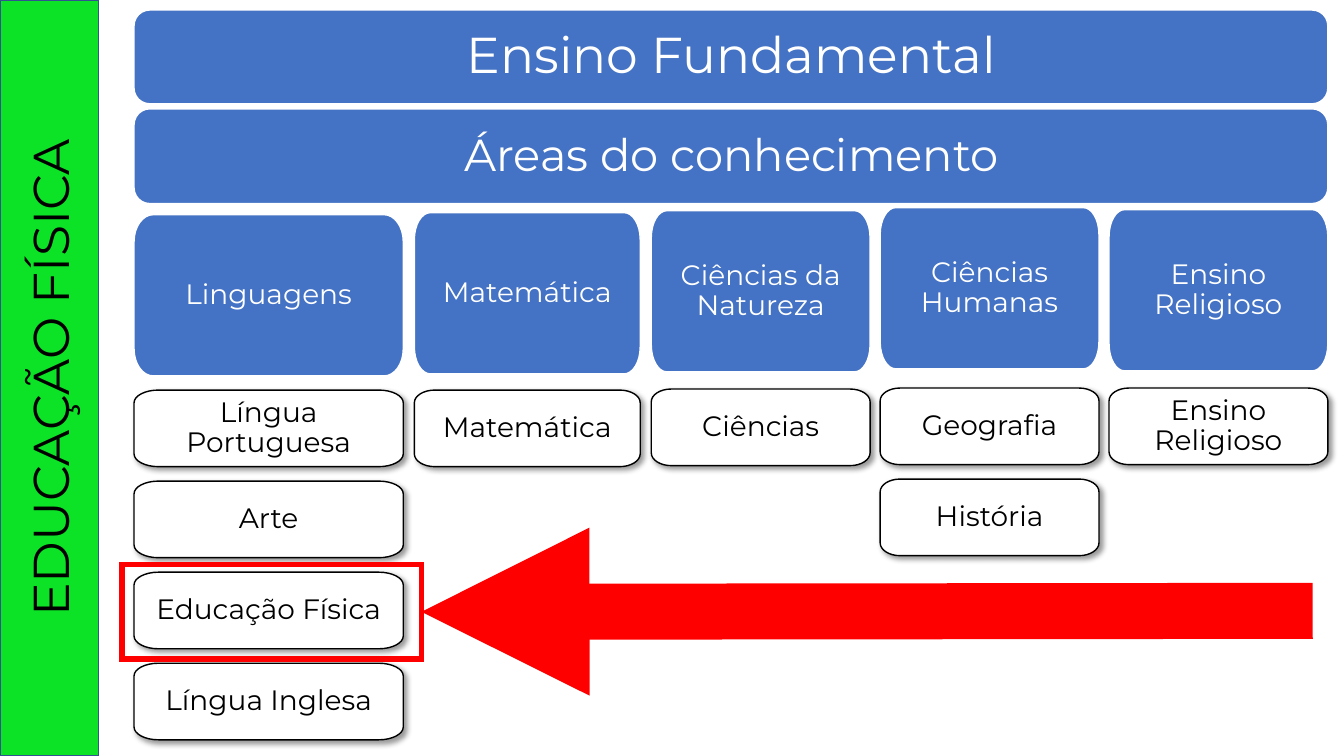
from dataclasses import dataclass

from lxml.etree import SubElement
from pptx import Presentation
from pptx.dml.color import RGBColor
from pptx.enum.shapes import MSO_CONNECTOR as Connector, MSO_SHAPE as Shape
from pptx.enum.text import MSO_ANCHOR as Anchor, MSO_AUTO_SIZE as AutoSize, PP_ALIGN as Align
from pptx.oxml.ns import qn
from pptx.util import Inches, Pt


@dataclass(frozen=True)
class Theme:
    font: str = "Montserrat"
    blue: str = "4472C4"
    green: str = "0DE326"
    navy: str = "31538F"
    red: str = "FF0000"
    white: str = "FFFFFF"
    black: str = "000000"
    title: int = 36
    subtitle: int = 32
    label: int = 20


THEME = Theme()
AREA_HEIGHT = 1.6
SUBJECT_HEIGHT = 0.76
SUBJECT_PITCH = 2.71 / 3
CURVE = 0.55
AREAS = [
    ("Linguagens", 1.33, 2.67, 2.13, 3.87,
     ["Língua Portuguesa", "Arte", "Educação Física", "Língua Inglesa"]),
    ("Matemática", 4.11, 2.24, 2.11, 3.87, ["Matemática"]),
    ("Ciências da Natureza", 6.46, 2.17, 2.09, 3.86, ["Ciências"]),
    ("Ciências Humanas", 8.73, 2.17, 2.06, 3.85, ["Geografia", "História"]),
    ("Ensino Religioso", 11, 2.17, 2.08, 3.85, ["Ensino Religioso"]),
]


def rgb(color):
    return RGBColor.from_string(color)


def paint(sp, fill, line, width=1):
    if fill:
        sp.fill.solid()
        sp.fill.fore_color.rgb = rgb(fill)
    else:
        sp.fill.background()
    sp.line.color.rgb = rgb(line)
    sp.line.width = Pt(width)
    SubElement(sp.line._get_or_add_ln(), qn("a:miter"), lim="800000")
    sp.shadow.inherit = False


def write(sp, text, size, color, inset=(0.1, 0.05), spacing=0.9):
    tf = sp.text_frame
    tf.word_wrap = True
    tf.auto_size = AutoSize.NONE
    tf.vertical_anchor = Anchor.MIDDLE
    tf.margin_left = tf.margin_right = Inches(inset[0])
    tf.margin_top = tf.margin_bottom = Inches(inset[1])
    p = tf.paragraphs[0]
    p.alignment = Align.CENTER
    p.line_spacing = spacing
    r = p.add_run()
    r.text = text
    r.font.name = THEME.font
    r.font.size = Pt(size)
    r.font.color.rgb = rgb(color)


def add_shadow(sp):
    effects = sp._element.spPr.find(qn("a:effectLst"))
    shadow = SubElement(effects, qn("a:outerShdw"), blurRad=str(Pt(4)), dist=str(Pt(3)),
                        dir="2700000", algn="tl", rotWithShape="0")
    color = SubElement(shadow, qn("a:srgbClr"), val=THEME.black)
    SubElement(color, qn("a:alpha"), val="40000")


def round_corners(sp):
    outline = next(sp._element.iter(qn("a:path")))
    w, h = int(outline.get("w")), int(outline.get("h"))
    steps = list(outline)
    ends = [(int(pt.get("x")), int(pt.get("y"))) for pt in outline.iter(qn("a:pt"))]
    for index, tip in zip((1, 3, 5, 7), [(0, 0), (w, 0), (w, h), (0, h)]):
        start, end = ends[index - 1], ends[index]
        controls = [tuple(round(a + CURVE * (t - a)) for a, t in zip(point, tip))
                    for point in (start, end)]
        curve = SubElement(outline, qn("a:cubicBezTo"))
        for x, y in controls + [end]:
            SubElement(curve, qn("a:pt"), x=str(x), y=str(y))
        outline.replace(steps[index], curve)


def add_card(s, text, left, top, width, height, fill, line, color, corner, inset):
    right, bottom = left + width, top + height
    rx, ry = width / corner, height / 6
    points = [(Inches(x), Inches(y)) for x, y in [
        (left, top + ry), (left + rx, top), (right - rx, top), (right, top + ry),
        (right, bottom - ry), (right - rx, bottom), (left + rx, bottom), (left, bottom - ry),
    ]]
    builder = s.shapes.build_freeform(*points[0])
    builder.add_line_segments(points[1:], close=True)
    sp = builder.convert_to_shape()
    round_corners(sp)
    paint(sp, fill, line)
    write(sp, text, THEME.label, color, inset)
    return sp


def add_area(s, text, left, width, top, subject_top, subjects):
    add_card(s, text, left, top, width, AREA_HEIGHT, THEME.blue, THEME.white,
             THEME.white, 14, (0.17, 0.12))
    for row, subject in enumerate(subjects):
        card = add_card(s, subject, left, subject_top + row * SUBJECT_PITCH, width,
                        SUBJECT_HEIGHT, THEME.white, THEME.black, THEME.black, 11,
                        (0.19, 0.13))
        add_shadow(card)


def add_banner(s, top, height):
    sp = s.shapes.add_shape(Shape.ROUNDED_RECTANGLE, Inches(1.33), Inches(top),
                            Inches(11.84), Inches(height))
    paint(sp, THEME.blue, THEME.white)


def set_heading(sp, text, top, height, size):
    sp.left, sp.top = Inches(1.73), Inches(top)
    sp.width, sp.height = Inches(11.05), Inches(height)
    write(sp, text, size, THEME.white)


def add_headings(s):
    add_banner(s, 0.1, 0.93)
    title = s.shapes.title
    s.shapes._spTree.append(title._element)
    set_heading(title, "Ensino Fundamental", 0.15, 0.84, THEME.title)
    add_banner(s, 1.08, 0.94)
    subtitle = s.shapes.add_textbox(0, 0, 0, 0)
    set_heading(subtitle, "Áreas do conhecimento", 1.13, 0.85, THEME.subtitle)


def add_highlight(s):
    frame = s.shapes.add_shape(Shape.RECTANGLE, Inches(1.21), Inches(5.6),
                               Inches(2.97), Inches(0.94))
    paint(frame, None, THEME.red, 4)
    arrow = s.shapes.add_connector(Connector.STRAIGHT, Inches(13.02), Inches(6.06),
                                   Inches(4.18), Inches(6.07))
    arrow.end_connect(frame, 3)
    arrow.line.color.rgb = rgb(THEME.red)
    arrow.line.width = Pt(40)
    SubElement(arrow.line._get_or_add_ln(), qn("a:tailEnd"), type="triangle")
    SubElement(arrow._element.spPr, qn("a:effectLst"))


def add_sidebar(s, text, width, height):
    sp = s.shapes.add_shape(Shape.RECTANGLE, 0, 0, width, height)
    paint(sp, THEME.green, THEME.navy)
    write(sp, text, THEME.title, THEME.black, spacing=1.0)
    sp.text_frame._txBody.bodyPr.set("vert", "vert270")


def main():
    prs = Presentation()
    prs.slide_width, prs.slide_height = Inches(13.33), Inches(7.5)
    s = prs.slides.add_slide(prs.slide_layouts[5])
    add_headings(s)
    for area in AREAS:
        add_area(s, *area)
    add_highlight(s)
    add_sidebar(s, "EDUCAÇÃO FÍSICA", Inches(0.98), prs.slide_height)
    prs.save("out.pptx")


if __name__ == "__main__":
    main()
